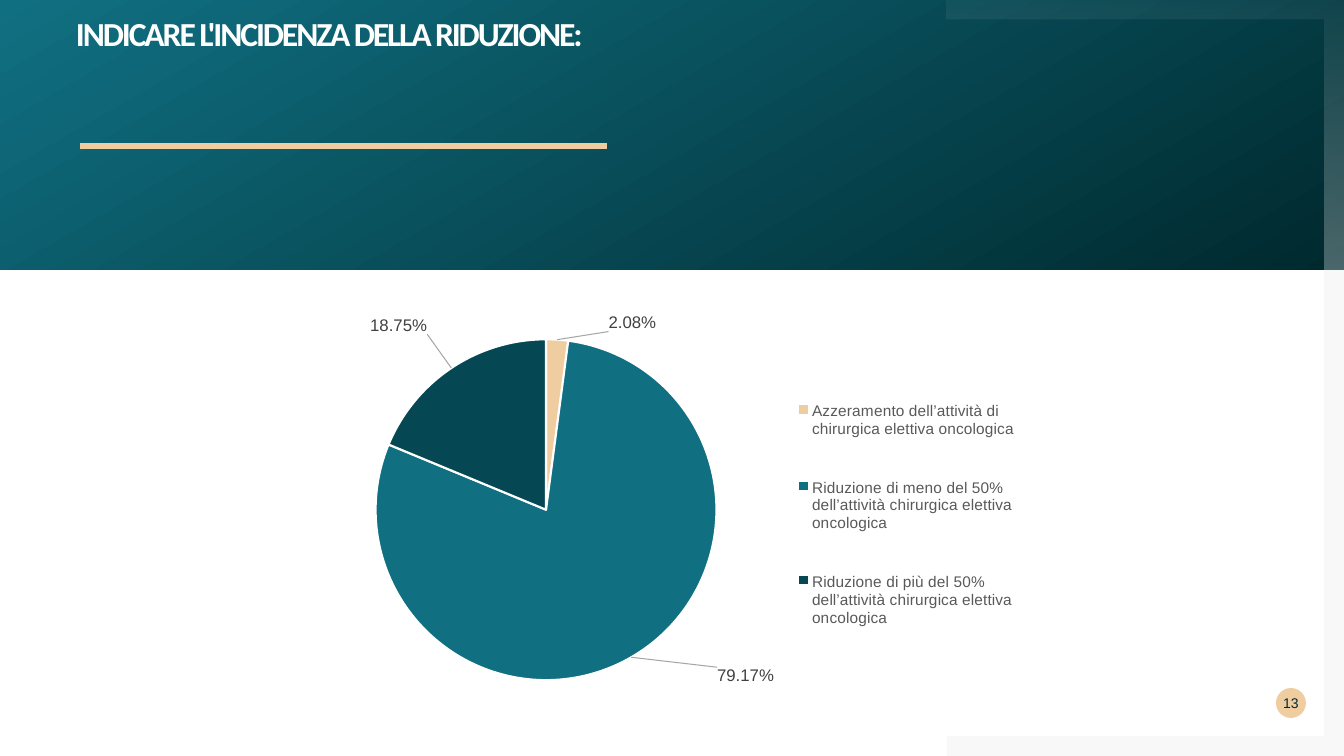
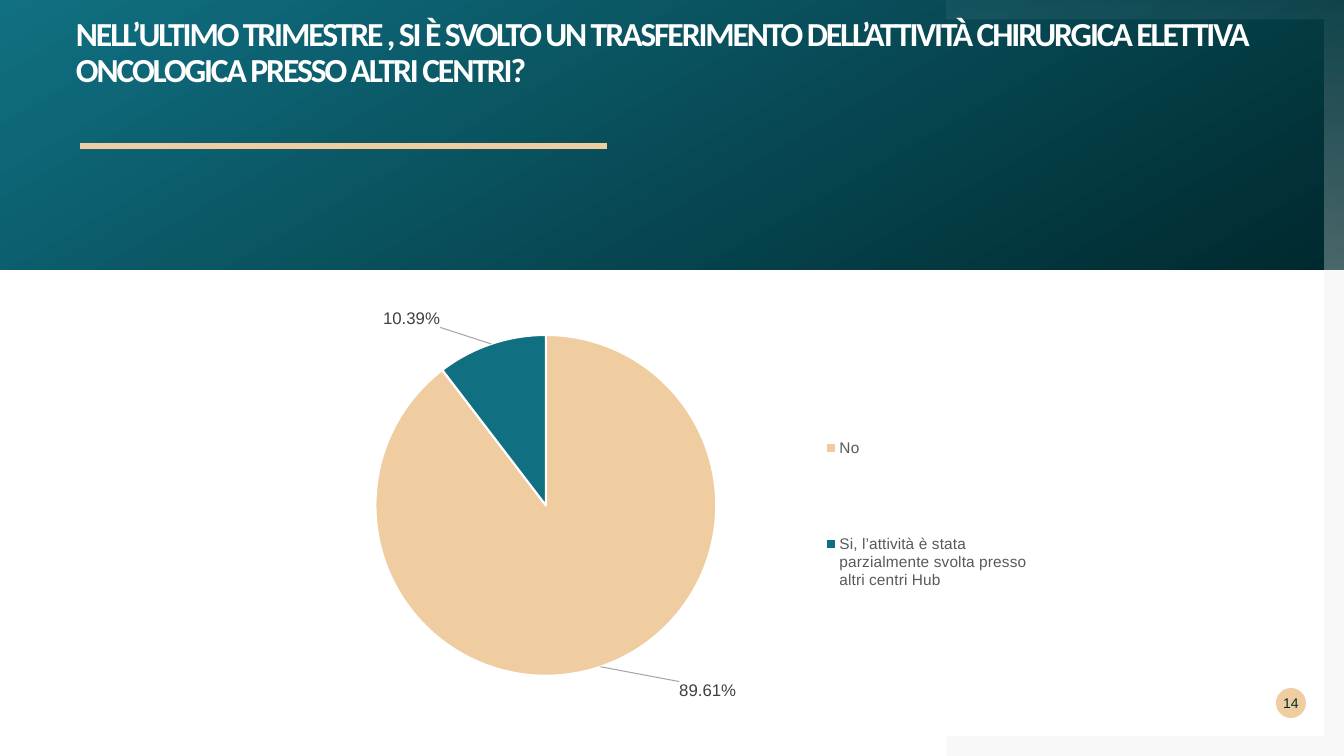
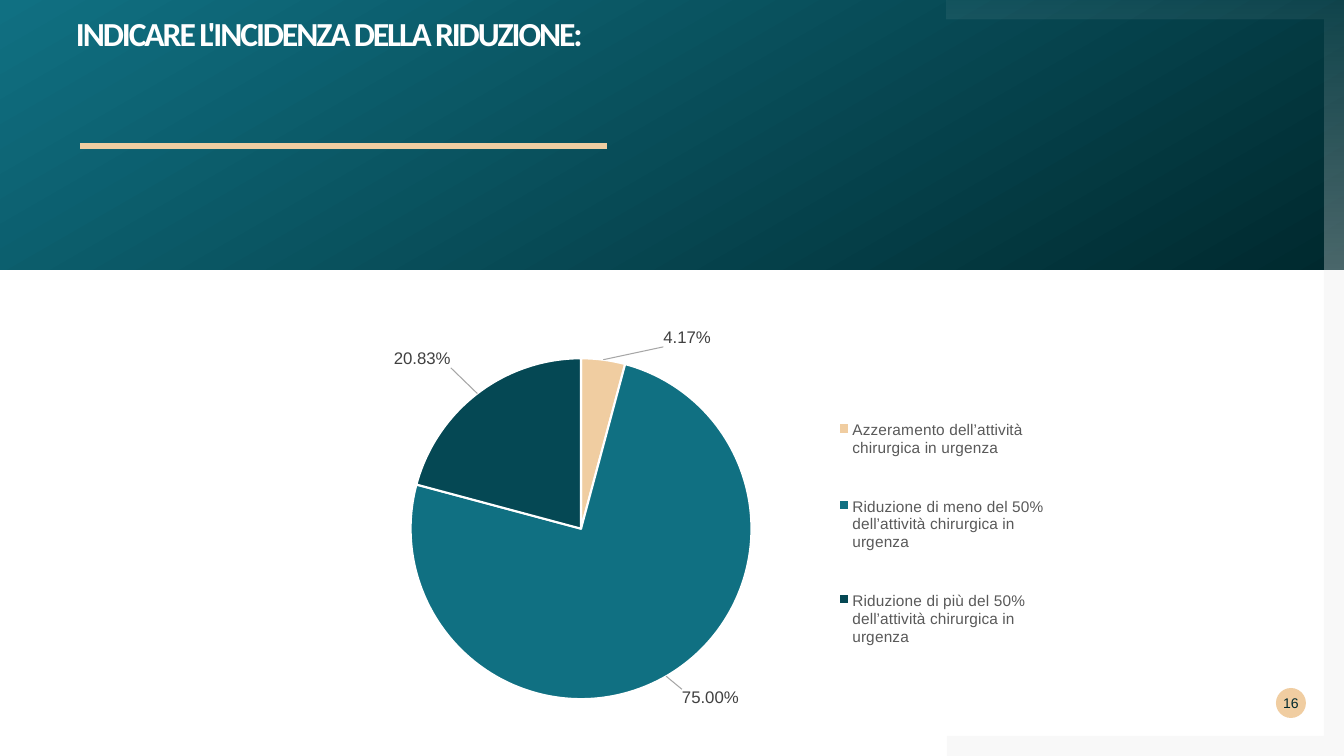
import copy

import lxml.etree
import pptx
import pptx.chart.data
import pptx.dml.color
import pptx.enum.chart
import pptx.enum.shapes
import pptx.enum.text
import pptx.oxml
import pptx.oxml.ns
import pptx.util

PX = 914400 / 100.8
SLIDE_W, SLIDE_H = 1344, 756
BAND_H = 270
FRAME_LEFT, FRAME_EDGE = 947, 20
CHART_W, CHART_H = 674, 437

SAND, TEAL, PETROL, NIGHT = "F0CDA1", "107082", "054854", "00292E"
WHITE, GREY, LABEL_GREY, LEGEND_GREY, LEADER_GREY = (
    "FFFFFF", "808080", "404040", "595959", "A6A6A6")
SLICE_COLOURS = [SAND, TEAL, PETROL]
TITLE_FONT, BODY_FONT = "Calibri", "Arial"

# Label shifts are px away from each label's automatic place outside the slice.
SLIDES = [
    dict(title="INDICARE L'INCIDENZA DELLA RIDUZIONE:", number=13,
         corner=(354, 300), plot=(0.03, 0.09),
         slices=[("Azzeramento dell’attività di chirurgica elettiva oncologica", 2.08, (75, -2)),
                 ("Riduzione di meno del 50% dell’attività chirurgica elettiva oncologica", 79.17, (83, 5)),
                 ("Riduzione di più del 50% dell’attività chirurgica elettiva oncologica", 18.75, (-21, -29))]),
    dict(title="NELL’ULTIMO TRIMESTRE , SI È SVOLTO UN TRASFERIMENTO DELL’ATTIVITÀ "
               "CHIRURGICA ELETTIVA ONCOLOGICA PRESSO ALTRI CENTRI?", number=14,
         corner=(374, 300), plot=(0, 0.08),
         slices=[("No", 89.61, (77, 9)),
                 ("Si, l’attività è stata parzialmente svolta presso altri centri Hub", 10.39, (-49, -11))]),
    dict(title="INDICARE L'INCIDENZA DELLA RIDUZIONE:", number=16,
         corner=(389, 319), plot=(0.03, 0.09),
         slices=[("Azzeramento dell’attività chirurgica in urgenza", 4.17, (59, -7)),
                 ("Riduzione di meno del 50% dell’attività chirurgica in urgenza", 75, (13, 8)),
                 ("Riduzione di più del 50% dell’attività chirurgica in urgenza", 20.83, (-23, -21))]),
]


def px(length):
    return pptx.util.Emu(round(length * PX))


def rgb(colour):
    return pptx.dml.color.RGBColor.from_string(colour)


def set_alphas(shape, *percents):
    """Give the fill colours of a shape, in order, an opacity in percent."""
    colours = shape._element.spPr.iter(pptx.oxml.ns.qn("a:srgbClr"))
    for colour, percent in zip(colours, percents):
        alpha = lxml.etree.SubElement(colour, pptx.oxml.ns.qn("a:alpha"))
        alpha.set("val", str(percent * 1000))


def paint(shape, colour):
    shape.fill.solid()
    shape.fill.fore_color.rgb = rgb(colour)
    shape.line.fill.background()
    shape.shadow.inherit = False


def paint_gradient(shape, start, end, angle):
    """The angle runs counter-clockwise from left to right."""
    paint(shape, start)
    shape.fill.gradient()
    shape.fill.gradient_angle = angle
    for stop, colour in zip(shape.fill.gradient_stops, (start, end)):
        stop.color.rgb = rgb(colour)


def set_font(font, size, colour, name=BODY_FONT, bold=False):
    font.size = pptx.util.Pt(size)
    font.color.rgb = rgb(colour)
    font.name = name
    font.bold = bold


def write(shape, text, size, colour, name=BODY_FONT, bold=False, align="LEFT",
          anchor="TOP", line_spacing=1.0, tracking=0):
    """Fill a shape with one paragraph; tracking is in points."""
    frame = shape.text_frame
    frame.word_wrap = True
    frame.margin_left = frame.margin_right = frame.margin_top = frame.margin_bottom = 0
    frame.vertical_anchor = getattr(pptx.enum.text.MSO_ANCHOR, anchor)
    paragraph = frame.paragraphs[0]
    paragraph.alignment = getattr(pptx.enum.text.PP_ALIGN, align)
    paragraph.line_spacing = line_spacing
    run = paragraph.add_run()
    run.text = text
    set_font(run.font, size, colour, name, bold)
    if tracking:
        run._r.get_or_add_rPr().set("spc", str(round(tracking * 100)))


def add_outline(slide, points):
    builder = slide.shapes.build_freeform(*points[0], scale=PX)
    builder.add_line_segments(points[1:], close=True)
    return builder.convert_to_shape()


def add_preset(slide, preset, left, top, width, height):
    kind = getattr(pptx.enum.shapes.MSO_SHAPE, preset)
    return slide.shapes.add_shape(kind, px(left), px(top), px(width), px(height))


def add_frame_corner(slide, outer, far):
    """L-shaped strip along the right side and the edge at height outer."""
    inner = abs(outer - FRAME_EDGE)
    inside = SLIDE_W - FRAME_EDGE
    return add_outline(slide, [(FRAME_LEFT, outer), (SLIDE_W, outer), (SLIDE_W, far),
                               (inside, far), (inside, inner), (FRAME_LEFT, inner)])


def add_background(slide):
    lower_frame = add_frame_corner(slide, SLIDE_H, BAND_H)
    paint(lower_frame, GREY)
    set_alphas(lower_frame, 5)
    band = add_preset(slide, "RECTANGLE", 0, 0, SLIDE_W, BAND_H)
    paint_gradient(band, NIGHT, TEAL, 120)
    upper_frame = add_frame_corner(slide, 0, BAND_H)
    paint_gradient(upper_frame, WHITE, WHITE, 270)
    set_alphas(upper_frame, 5, 30)


def add_title(slide, title):
    box = slide.shapes.add_textbox(px(76), px(17), px(1231), px(119))
    write(box, title, 24, WHITE, name=TITLE_FONT, bold=True, line_spacing=0.9, tracking=-1.5)
    rule = slide.shapes.add_connector(
        pptx.enum.shapes.MSO_CONNECTOR.STRAIGHT, px(80), px(146), px(607), px(146))
    rule.line.color.rgb = rgb(SAND)
    rule.line.width = pptx.util.Pt(4.32)
    lxml.etree.SubElement(rule._element.spPr, pptx.oxml.ns.qn("a:effectLst"))


def add_page_number(slide, number):
    badge = add_preset(slide, "OVAL", 1276, 688, 30, 30)
    paint(badge, SAND)
    write(badge, str(number), 10, NIGHT, align="CENTER", anchor="MIDDLE")


def place(part, index, **settings):
    """Put a manual layout into a chart part, as its child at index."""
    for old in part.findall(pptx.oxml.ns.qn("c:layout")):
        part.remove(old)
    layout = lxml.etree.Element(pptx.oxml.ns.qn("c:layout"))
    manual = lxml.etree.SubElement(layout, pptx.oxml.ns.qn("c:manualLayout"))
    for tag, value in settings.items():
        lxml.etree.SubElement(manual, pptx.oxml.ns.qn("c:" + tag)).set("val", str(value))
    part.insert(index, layout)


def add_percent_labels(series, shifts):
    labels = series.data_labels
    labels.show_value = False
    labels.show_percentage = True
    labels.number_format = "0.00%"
    labels.number_format_is_linked = False
    labels.position = pptx.enum.chart.XL_LABEL_POSITION.OUTSIDE_END
    set_font(labels.font, 12, LABEL_GREY)

    group = labels._element
    leader_tag = pptx.oxml.ns.qn("c:showLeaderLines")
    shared = [child for child in group if child.tag != leader_tag]
    for index, (dx, dy) in enumerate(shifts):
        label = lxml.etree.Element(pptx.oxml.ns.qn("c:dLbl"))
        lxml.etree.SubElement(label, pptx.oxml.ns.qn("c:idx")).set("val", str(index))
        label.extend(copy.deepcopy(shared))
        place(label, 1, x=round(dx / CHART_W, 3), y=round(dy / CHART_H, 3))
        group.insert(index, label)

    for old in group.findall(leader_tag):
        group.remove(old)
    lxml.etree.SubElement(group, leader_tag).set("val", "1")
    group.append(pptx.oxml.parse_xml(
        f'<c:leaderLines {pptx.oxml.ns.nsdecls("c", "a")}><c:spPr><a:ln w="9525">'
        f'<a:solidFill><a:srgbClr val="{LEADER_GREY}"/></a:solidFill></a:ln></c:spPr></c:leaderLines>'))


def add_pie(slide, corner, plot, slices):
    names, values, shifts = zip(*slices)
    pie_data = pptx.chart.data.CategoryChartData()
    pie_data.categories = names
    pie_data.add_series("Series 1", values)
    chart = slide.shapes.add_chart(
        pptx.enum.chart.XL_CHART_TYPE.PIE, px(corner[0]), px(corner[1]),
        px(CHART_W), px(CHART_H), pie_data).chart
    chart.has_title = False
    set_font(chart.font, 10, "000000")

    pie = chart.plots[0]
    pie.vary_by_categories = True
    series = pie.series[0]
    for index, colour in enumerate(SLICE_COLOURS[:len(values)]):
        part = series.points[index].format
        part.fill.solid()
        part.fill.fore_color.rgb = rgb(colour)
        part.line.color.rgb = rgb(WHITE)
        part.line.width = pptx.util.Pt(1.5)
    add_percent_labels(series, shifts)

    chart.has_legend = True
    chart.legend.position = pptx.enum.chart.XL_LEGEND_POSITION.RIGHT
    chart.legend.include_in_layout = False
    set_font(chart.legend.font, 11, LEGEND_GREY)
    place(chart.legend._element, 1, xMode="edge", yMode="edge", x=0.65, y=0.14, w=0.34, h=0.7)
    plot_area = chart._chartSpace.chart.plotArea
    place(plot_area, 0, layoutTarget="inner", xMode="edge", yMode="edge",
          x=plot[0], y=plot[1], w=0.51, h=0.78)


def main():
    deck = pptx.Presentation()
    deck.slide_width, deck.slide_height = px(SLIDE_W), px(SLIDE_H)
    for content in SLIDES:
        slide = deck.slides.add_slide(deck.slide_layouts[6])
        add_background(slide)
        add_title(slide, content["title"])
        add_page_number(slide, content["number"])
        add_pie(slide, content["corner"], content["plot"], content["slices"])
    deck.save("out.pptx")


if __name__ == "__main__":
    main()
